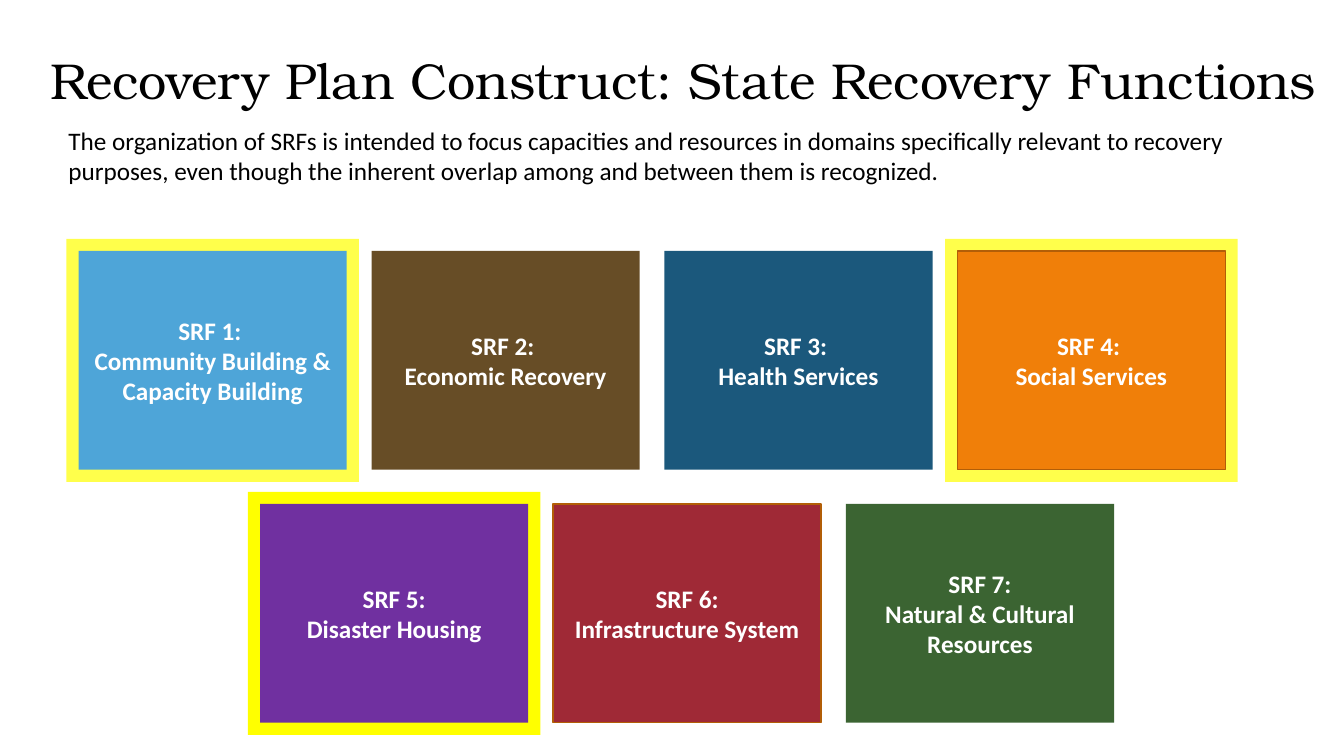
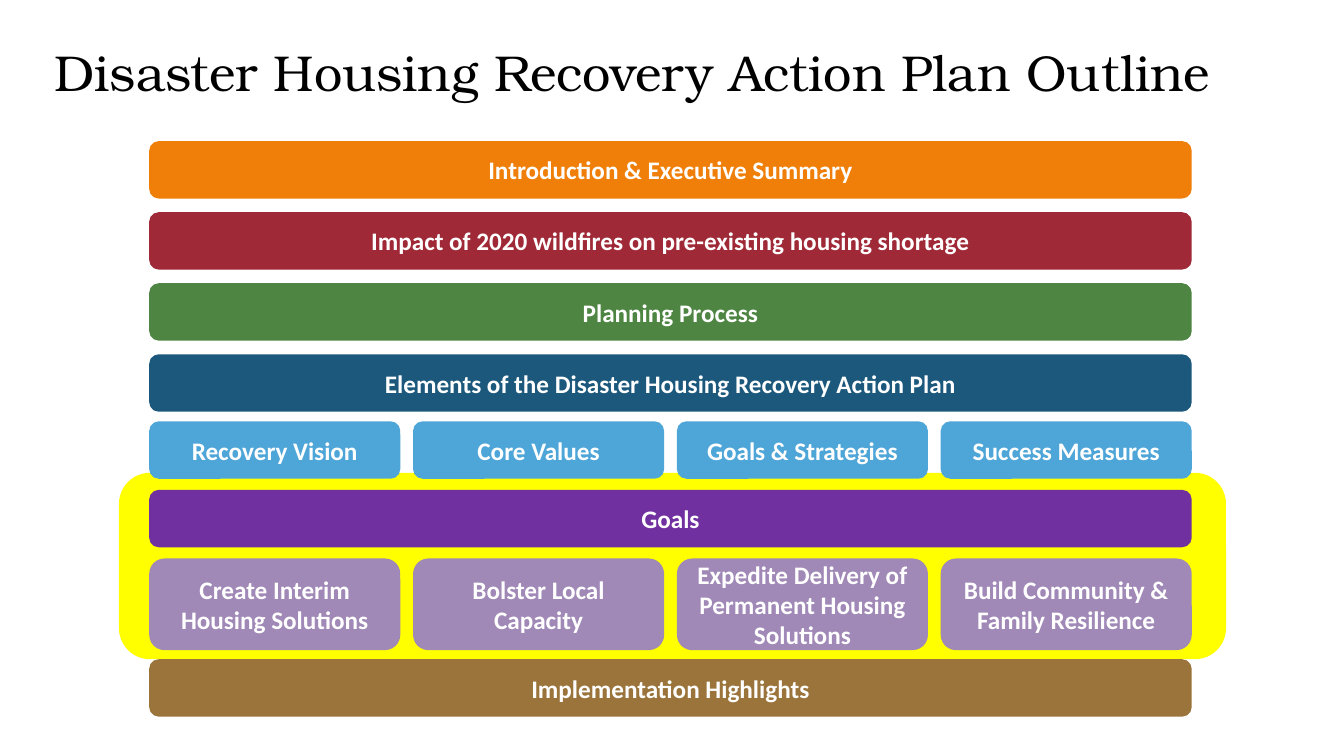
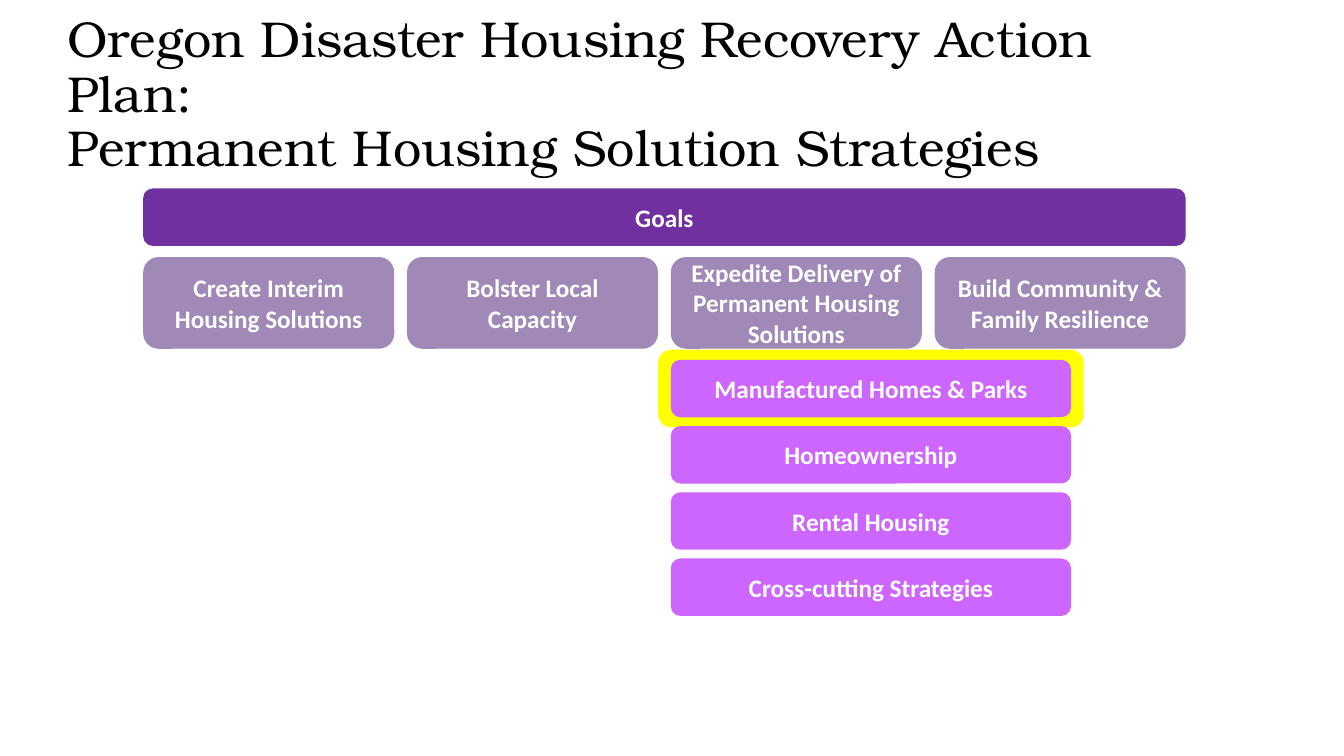
from dataclasses import dataclass

from pptx import Presentation
from pptx.dml.color import RGBColor
from pptx.enum.shapes import MSO_SHAPE as SHAPE
from pptx.enum.text import MSO_ANCHOR as ANCHOR, MSO_AUTO_SIZE as AUTO, PP_ALIGN as ALIGN
from pptx.slide import Slide
from pptx.util import Inches, Pt

COLORS = {
    "black": "000000", "white": "FFFFFF", "yellow": "FFFF00", "lemon": "FFFF4B",
    "sky": "4EA5D8", "umber": "674D26", "navy": "1B587C", "orange": "F07F09",
    "rust": "B25E07", "purple": "7030A0", "red": "9F2936", "forest": "3B6432",
    "green": "4E8542", "tan": "9A743A", "lilac": "A088B7", "violet": "CC66FF",
}
TITLE_FONT, BODY_FONT = "TeX Gyre Bonum", "Calibri"
BAR_W, BAR_H = 10.34, 0.57
CELL_W, GOAL_H = 2.49, 0.91
CELL_STEP = (BAR_W - CELL_W) / 3
GOALS = ["Create Interim Housing Solutions", "Bolster Local Capacity",
         "Expedite Delivery of Permanent Housing Solutions",
         "Build Community & Family Resilience"]


@dataclass
class Box:
    x: float
    y: float
    w: float
    h: float
    fill: str
    text: str = ""
    line: str = ""
    shape: SHAPE = SHAPE.ROUNDED_RECTANGLE

    def halo(self, fill: str, dx: float, dy: float) -> "Box":
        return Box(self.x - dx, self.y - dy, self.w + 2 * dx, self.h + 2 * dy,
                   fill, shape=self.shape)


@dataclass
class Function:
    text: str
    fill: str
    line: str = ""
    halo: str = ""


def rgb(name: str) -> RGBColor:
    return RGBColor.from_string(COLORS[name])


def add_box(s: Slide, box: Box) -> None:
    sp = s.shapes.add_shape(box.shape, Inches(box.x), Inches(box.y),
                            Inches(box.w), Inches(box.h))
    sp.shadow.inherit = False
    sp.fill.solid()
    sp.fill.fore_color.rgb = rgb(box.fill)
    if box.line:
        sp.line.color.rgb = rgb(box.line)
        sp.line.width = Pt(1)
    else:
        sp.line.fill.background()
    if box.text:
        tf = sp.text_frame
        tf.word_wrap = True
        tf.vertical_anchor = ANCHOR.MIDDLE
        p = tf.paragraphs[0]
        p.text = box.text
        p.alignment = ALIGN.CENTER
        p.font.name, p.font.size, p.font.bold = BODY_FONT, Pt(18), True
        p.font.color.rgb = rgb("white")


def add_slide(prs: Presentation, title: str, x: float, y: float, w: float) -> Slide:
    s = prs.slides.add_slide(prs.slide_layouts[5])
    sp = s.shapes.title
    sp.left, sp.top, sp.width, sp.height = Inches(x), Inches(y), Inches(w), Inches(0.72)
    tf = sp.text_frame
    tf.word_wrap = True
    tf.auto_size = AUTO.NONE
    tf.vertical_anchor = ANCHOR.MIDDLE
    p = tf.paragraphs[0]
    p.text = title
    p.alignment = ALIGN.LEFT
    p.line_spacing = 0.9
    p.font.name, p.font.size = TITLE_FONT, Pt(36)
    p.font.color.rgb = rgb("black")
    return s


def add_bar(s: Slide, x: float, y: float, text: str, fill: str, w: float = BAR_W) -> None:
    add_box(s, Box(x, y, w, BAR_H, fill, text))


def add_cells(s: Slide, x: float, y: float, h: float, fill: str, texts: list[str]) -> None:
    for i, text in enumerate(texts):
        add_box(s, Box(x + i * CELL_STEP, y, CELL_W, h, fill, text))


def add_goals(s: Slide, x: float, y: float) -> None:
    add_bar(s, x, y, "Goals", "purple")
    add_cells(s, x, y + 0.68, GOAL_H, "lilac", GOALS)


def functions_slide(prs: Presentation) -> None:
    s = add_slide(prs, "Recovery Plan Construct: State Recovery Functions", 0.4, 0.47, 12.82)
    tb = s.shapes.add_textbox(Inches(0.58), Inches(1.19), Inches(11.84), Inches(1.01))
    tf = tb.text_frame
    tf.word_wrap = True
    p = tf.paragraphs[0]
    p.text = ("The organization of SRFs is intended to focus capacities and resources in "
              "domains specifically relevant to recovery purposes, even though the inherent "
              "overlap among and between them is recognized.")
    p.font.name, p.font.size = BODY_FONT, Pt(18)
    p.font.color.rgb = rgb("black")
    rows = [
        (0.78, 2.49, [
            Function("SRF 1: \nCommunity Building & Capacity Building", "sky", halo="lemon"),
            Function("SRF 2: \nEconomic Recovery", "umber"),
            Function("SRF 3: \nHealth Services", "navy"),
            Function("SRF 4: \nSocial Services", "orange", "rust", "lemon")]),
        (2.58, 5, [
            Function("SRF 5:\nDisaster Housing", "purple", halo="yellow"),
            Function("SRF 6:\nInfrastructure System", "red", "rust"),
            Function("SRF 7:\nNatural & Cultural Resources", "forest")]),
    ]
    for x, y, functions in rows:
        for i, f in enumerate(functions):
            box = Box(x + i * 2.905, y, 2.66, 2.17, f.fill, f.text, f.line, SHAPE.RECTANGLE)
            if f.halo:
                add_box(s, box.halo(f.halo, 0.12, 0.12))
            add_box(s, box)


def outline_slide(prs: Presentation) -> None:
    s = add_slide(prs, "Disaster Housing Recovery Action Plan Outline", 0.44, 0.39, 11.76)
    x = 1.48
    add_box(s, Box(1.18, 4.69, 10.98, 1.85, "yellow"))
    sections = [("Introduction & Executive Summary", "orange"),
                ("Impact of 2020 wildfires on pre-existing housing shortage", "red"),
                ("Planning Process", "green"),
                ("Elements of the Disaster Housing Recovery Action Plan", "navy")]
    for i, (text, fill) in enumerate(sections):
        add_bar(s, x, 1.4 + i * 0.705, text, fill)
    add_cells(s, x, 4.18, BAR_H, "sky",
              ["Recovery Vision", "Core Values", "Goals & Strategies", "Success Measures"])
    add_goals(s, x, 4.86)
    add_bar(s, x, 6.54, "Implementation Highlights", "tan")


def strategies_slide(prs: Presentation) -> None:
    s = add_slide(prs, "Oregon Disaster Housing Recovery Action Plan:\n"
                  "Permanent Housing Solution Strategies", 0.57, 0.59, 11.57)
    x, y, w = 1.42, 3.57, 3.97
    strategy_x = x + 2 * CELL_STEP
    add_box(s, Box(strategy_x, y, w, BAR_H, "violet").halo("yellow", 0.125, 0.1))
    add_goals(s, x, 1.87)
    strategies = ["Manufactured Homes & Parks", "Homeownership", "Rental Housing",
                  "Cross-cutting Strategies"]
    for i, text in enumerate(strategies):
        add_bar(s, strategy_x, y + i * 0.657, text, "violet", w)


def main() -> None:
    prs = Presentation()
    prs.slide_width, prs.slide_height = Inches(13.33), Inches(7.5)
    functions_slide(prs)
    outline_slide(prs)
    strategies_slide(prs)
    prs.save("out.pptx")


if __name__ == "__main__":
    main()
